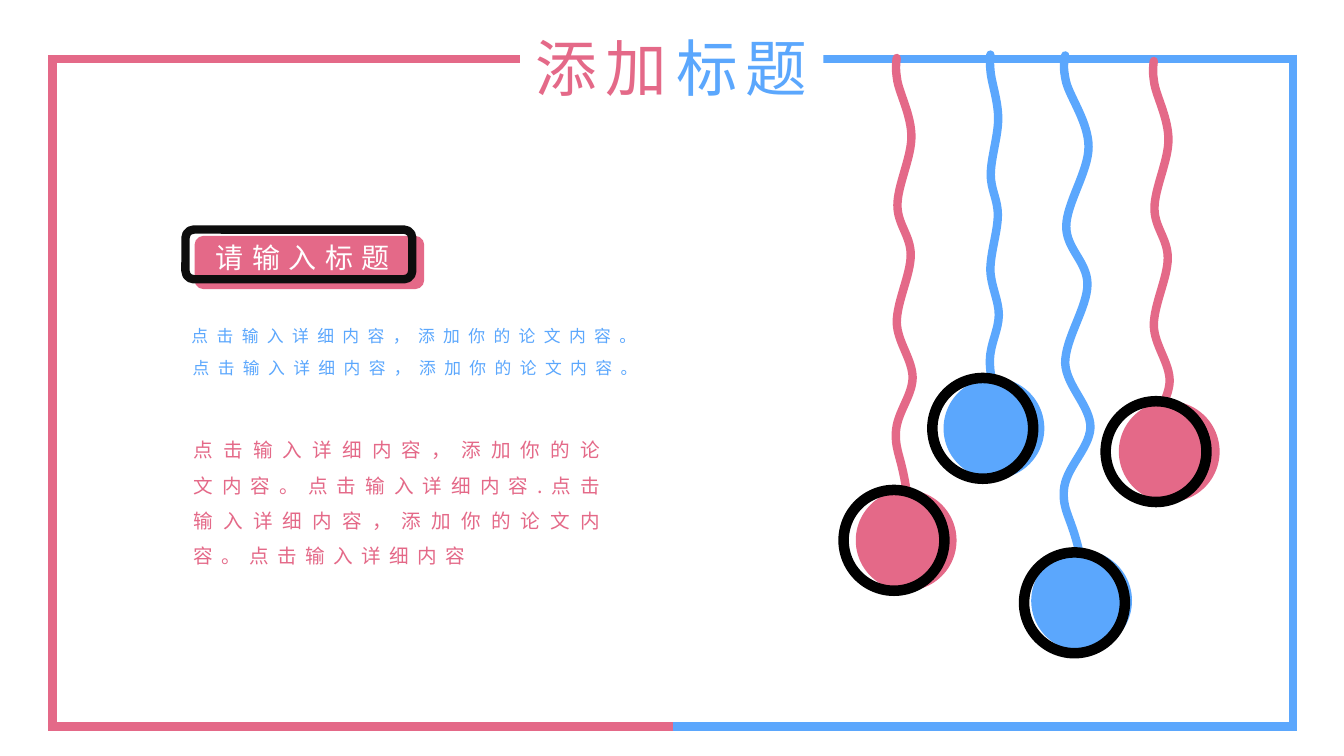
from dataclasses import dataclass

from lxml import etree
from pptx import Presentation
from pptx.dml.color import RGBColor
from pptx.enum.shapes import MSO_CONNECTOR, MSO_SHAPE
from pptx.enum.text import MSO_ANCHOR, MSO_AUTO_SIZE, PP_ALIGN
from pptx.oxml.ns import qn
from pptx.util import Pt

STRAIGHT = MSO_CONNECTOR.STRAIGHT
RECTANGLE = MSO_SHAPE.RECTANGLE
ROUNDED = MSO_SHAPE.ROUNDED_RECTANGLE
OVAL = MSO_SHAPE.OVAL
TOP, MIDDLE = MSO_ANCHOR.TOP, MSO_ANCHOR.MIDDLE
FIT_TEXT = MSO_AUTO_SIZE.SHAPE_TO_FIT_TEXT
LEFT, CENTER, JUSTIFY = PP_ALIGN.LEFT, PP_ALIGN.CENTER, PP_ALIGN.JUSTIFY


@dataclass(frozen=True)
class Theme:
    font: str = "Noto Sans CJK SC"
    pink: str = "E46988"
    blue: str = "5BA7FD"
    white: str = "FFFFFF"
    black: str = "000000"
    ink: str = "0D0D0D"
    title: float = 44
    label: float = 20
    body: float = 14
    note: float = 12
    spacing: float = 6
    stroke: float = 6
    ring: float = 7.5


THEME = Theme()
BALL_SIZE = 72
NOTE = "点击输入详细内容，添加你的论文内容。"
BODY = "点击输入详细内容，添加你的论文内容。点击输入详细内容.点击输入详细内容，添加你的论文内容。点击输入详细内容"

WAVE_WIDTH, WAVE_HEIGHT = 100, 1000
WAVE = [
    (70, 1000),
    (37, 905), (-3, 897), (2, 852),
    (7, 807), (96, 771), (100, 728),
    (100, 686), (11, 647), (7, 602),
    (7, 554), (89, 493), (89, 448),
    (89, 404), (11, 379), (11, 335),
    (11, 290), (93, 227), (93, 179),
    (93, 132), (26, 83), (11, 53),
    (-3, 22), (4, 12), (7, 0),
]

STRINGS = [
    (759.5, 39.6, 19.4, 365, THEME.blue),
    (707, 39, 6.5, 255.6, THEME.blue),
    (823.3, 43.6, 12.2, 314, THEME.pink),
    (639.7, 41.4, 12.2, 314, THEME.pink),
]

BALLS = [
    ((611.3, 350), (602.6, 350), THEME.pink),
    ((674, 270), (666, 270), THEME.blue),
    ((736.6, 393.1), (731.5, 394.6), THEME.blue),
    ((799.2, 286.6), (789.8, 286.6), THEME.pink),
]


def rgb(color):
    return RGBColor.from_string(color)


def set_stroke(line, color, width):
    line.color.rgb = rgb(color)
    line.width = Pt(width)


def add_figure(slide, kind, left, top, width, height, fill=None, stroke=None, weight=THEME.stroke):
    figure = slide.shapes.add_shape(kind, Pt(left), Pt(top), Pt(width), Pt(height))
    figure.shadow.inherit = False
    if fill:
        figure.fill.solid()
        figure.fill.fore_color.rgb = rgb(fill)
    else:
        figure.fill.background()
    if stroke:
        set_stroke(figure.line, stroke, weight)
    else:
        figure.line.fill.background()
    return figure


def add_edge(slide, start, end, color):
    edge = slide.shapes.add_connector(STRAIGHT, *(Pt(value) for value in start + end))
    set_stroke(edge.line, color, THEME.stroke)
    etree.SubElement(edge._element.spPr, qn("a:effectLst"))
    return edge


def add_string(slide, left, top, width, height, color):
    points = [(Pt(left + x * width / WAVE_WIDTH), Pt(top + y * height / WAVE_HEIGHT)) for x, y in WAVE]
    builder = slide.shapes.build_freeform(*points[0])
    builder.add_line_segments(points[1:], close=False)
    string = builder.convert_to_shape()
    string.shadow.inherit = False
    string.fill.background()
    set_stroke(string.line, color, THEME.stroke)
    string._element.spPr.find(qn("a:ln")).set("cap", "rnd")
    segments = list(string._element.iter(qn("a:lnTo")))
    for first in range(0, len(segments), 3):
        group = segments[first:first + 3]
        curve = etree.Element(qn("a:cubicBezTo"))
        group[0].addprevious(curve)
        for segment in group:
            curve.append(segment[0])
            segment.getparent().remove(segment)


def write_text(frame, runs, *, size, align=LEFT, anchor=TOP, line_spacing=None, inset=(7.2, 3.6), wrap=True):
    frame.word_wrap = wrap
    frame.auto_size = FIT_TEXT
    frame.vertical_anchor = anchor
    frame.margin_left = frame.margin_right = Pt(inset[0])
    frame.margin_top = frame.margin_bottom = Pt(inset[1])
    paragraph = frame.paragraphs[0]
    paragraph.alignment = align
    if line_spacing:
        paragraph.line_spacing = line_spacing
    for words, color in runs:
        run = paragraph.add_run()
        run.text = words
        run.font.size = Pt(size)
        run.font.name = THEME.font
        run.font.color.rgb = rgb(color)
        properties = run.font._element
        properties.set("spc", str(int(THEME.spacing * 100)))
        etree.SubElement(properties, qn("a:ea"), typeface=THEME.font)


def add_text(slide, left, top, width, height, runs, **text_format):
    box = slide.shapes.add_textbox(Pt(left), Pt(top), Pt(width), Pt(height))
    write_text(box.text_frame, runs, **text_format)


def add_frame(slide):
    frame = add_figure(slide, RECTANGLE, 37.5, 42, 886, 477, stroke=THEME.pink)
    etree.SubElement(frame._element.spPr.find(qn("a:ln")), qn("a:miter"), lim="800000")
    for side, y in ((0, 42), (2, 519)):
        half = add_edge(slide, (480.5, y), (923.5, y), THEME.blue)
        half.begin_connect(frame, side)
    add_edge(slide, (923.5, 39), (923.5, 522), THEME.blue)


def add_ornaments(slide):
    for string in STRINGS:
        add_string(slide, *string)
    for disc, _, color in BALLS:
        add_figure(slide, OVAL, *disc, BALL_SIZE, BALL_SIZE, fill=color)
    for _, ring, _ in BALLS:
        add_figure(slide, OVAL, *ring, BALL_SIZE, BALL_SIZE, stroke=THEME.black, weight=THEME.ring)


def add_label(slide):
    add_figure(slide, ROUNDED, 139, 168.5, 164, 38, fill=THEME.pink)
    add_text(slide, 147, 168.5, 220, 31.5, [("请输入标题", THEME.white)], size=THEME.label)
    add_figure(slide, ROUNDED, 132.5, 164, 162, 35.5, stroke=THEME.ink)


def add_copy(slide):
    inset = (5.76, 2.88)
    add_text(slide, 132.5, 301.7, 308, 132.5, [(BODY, THEME.pink)],
             size=THEME.body, align=JUSTIFY, line_spacing=1.5, inset=inset)
    for left, top in ((131, 229.7), (131.8, 253)):
        add_text(slide, left, top, 331, 20, [(NOTE, THEME.blue)],
                 size=THEME.note, align=JUSTIFY, inset=inset)


def add_title(slide):
    title = add_figure(slide, RECTANGLE, 371.5, 17.3, 216.7, 60.5, fill=THEME.white)
    write_text(title.text_frame, [("添加", THEME.pink), ("标题", THEME.blue)],
               size=THEME.title, align=CENTER, anchor=MIDDLE, wrap=False)


def main():
    deck = Presentation()
    deck.slide_width, deck.slide_height = Pt(960), Pt(540)
    slide = deck.slides.add_slide(deck.slide_layouts[6])
    add_frame(slide)
    add_ornaments(slide)
    add_copy(slide)
    add_label(slide)
    add_title(slide)
    deck.save("out.pptx")


if __name__ == "__main__":
    main()
